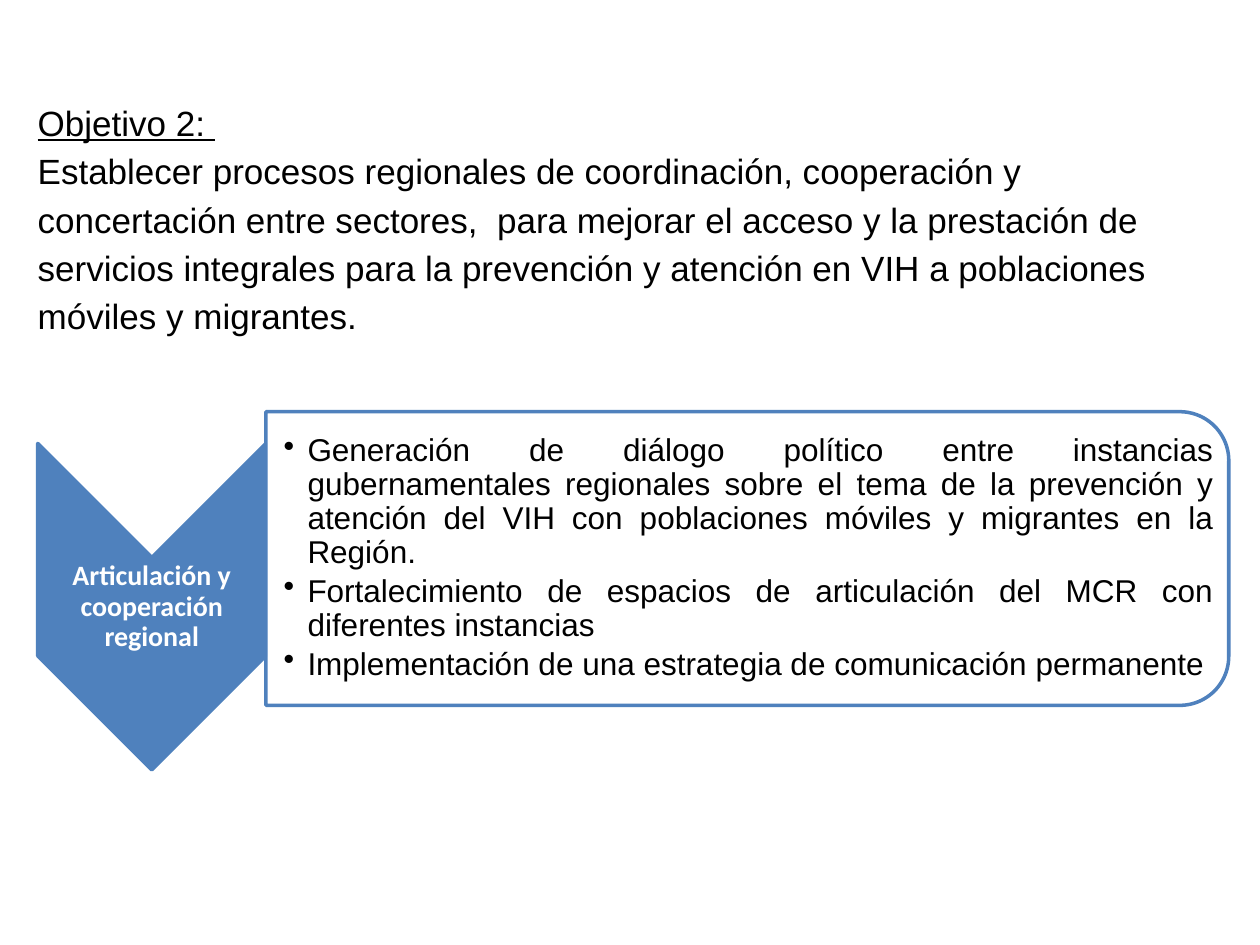
from lxml.etree import SubElement
from pptx import Presentation
from pptx.dml.color import RGBColor
from pptx.enum.shapes import MSO_SHAPE
from pptx.enum.text import MSO_ANCHOR, PP_ALIGN
from pptx.oxml.ns import qn
from pptx.util import Cm, Pt

# Content
OBJECTIVE = [
    "Objetivo 2: ",
    "Establecer procesos regionales de coordinación, cooperación y concertación "
    "entre sectores,  para mejorar el acceso y la prestación de servicios integrales "
    "para la prevención y atención en VIH a poblaciones móviles y migrantes.",
]
THEME = "Articulación y cooperación regional"
ACTIONS = [
    "Generación de diálogo político entre instancias gubernamentales regionales sobre "
    "el tema de la prevención y atención del VIH con poblaciones móviles y migrantes "
    "en la Región.",
    "Fortalecimiento de espacios de articulación del MCR con diferentes instancias",
    "Implementación de una estrategia de comunicación permanente",
]
COLORS = {"blue": "4F81BD", "white": "FFFFFF", "black": "000000"}

# Areas in cm: left, top, width, height
OBJECTIVE_AREA = (0.51, 1.92, 24.2, 4.95)
CHEVRON_AREA = (0.76, 8.94, 4.6, 6.58)
THEME_AREA = (0.76, 11.25, 4.6, 1.98)
PANEL_AREA = (5.36, 8.3, 19.41, 5.92)
ACTIONS_AREA = (5.36, 8.59, 19.13, 5.33)


def color(name):
    return RGBColor.from_string(COLORS[name])


def add_turned_shape(page, kind, area, fill):
    """Add a shape turned 90 degrees so that it covers the given area."""
    left, top, width, height = area
    shift = (width - height) / 2
    shape = page.shapes.add_shape(
        kind, Cm(left + shift), Cm(top - shift), Cm(height), Cm(width))
    shape.rotation = 90
    shape.shadow.inherit = False
    shape.fill.solid()
    shape.fill.fore_color.rgb = color(fill)
    shape.line.color.rgb = color("blue")
    shape.line.width = Pt(2)
    return shape


def add_text(page, area, texts, font, size, ink, spacing, align, insets,
             anchor=MSO_ANCHOR.MIDDLE, bold=False, bullet=False):
    box = page.shapes.add_textbox(*map(Cm, area))
    frame = box.text_frame
    frame.word_wrap = True
    frame.vertical_anchor = anchor
    frame.margin_left, frame.margin_top, frame.margin_right, frame.margin_bottom = map(Cm, insets)
    for index, text in enumerate(texts):
        para = frame.add_paragraph() if index else frame.paragraphs[0]
        para.text = text
        para.alignment = align
        para.line_spacing = spacing
        if bullet:
            para.space_after = Pt(2.7)
            properties = para._p.get_or_add_pPr()
            properties.set("marL", str(Cm(0.48)))
            properties.set("indent", str(-Cm(0.48)))
            SubElement(properties, qn("a:buChar"), char="•")
        para.font.name = font
        para.font.size = Pt(size)
        para.font.bold = bold
        para.font.color.rgb = color(ink)
    return frame


deck = Presentation()
deck.slide_width, deck.slide_height = Cm(25.4), Cm(19.05)
page = deck.slides.add_slide(deck.slide_layouts[6])

# Objective
objective = add_text(page, OBJECTIVE_AREA, OBJECTIVE, "Arial", 20, "black", 1.15,
                     PP_ALIGN.LEFT, (0.25, 0, 0.25, 0), anchor=MSO_ANCHOR.TOP)
objective.paragraphs[0].font.underline = True
objective.paragraphs[0].runs[0].font.underline = True

# Theme chevron
add_turned_shape(page, MSO_SHAPE.CHEVRON, CHEVRON_AREA, "blue")
add_text(page, THEME_AREA, [THEME], "Calibri", 16, "white", 0.9,
         PP_ALIGN.CENTER, (0.03, 0.03, 0.03, 0.03), bold=True)

# Action panel, slightly translucent
panel = add_turned_shape(page, MSO_SHAPE.ROUND_2_SAME_RECTANGLE, PANEL_AREA, "white")
panel_color = panel._element.spPr.find(qn("a:solidFill")).find(qn("a:srgbClr"))
SubElement(panel_color, qn("a:alpha"), val="90000")
add_text(page, ACTIONS_AREA, ACTIONS, "Arial", 18, "black", 0.9,
         PP_ALIGN.JUSTIFY, (0.36, 0.03, 0.03, 0.03), bullet=True)

deck.save("out.pptx")
